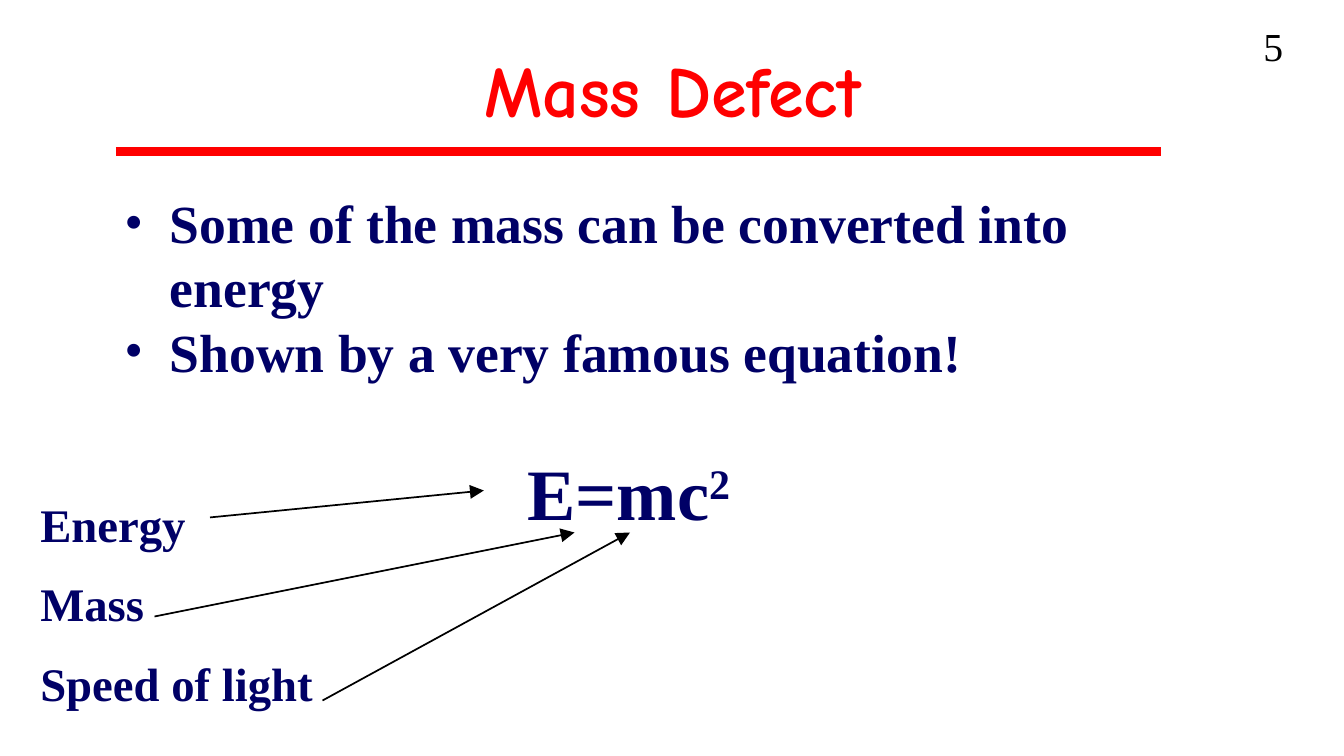
from typing import NamedTuple

import pptx
import pptx.dml.color
import pptx.enum.shapes
import pptx.enum.text
import pptx.oxml
import pptx.oxml.ns
import pptx.util

WIDTH, HEIGHT = 8, 4.5
RED = pptx.dml.color.RGBColor(0xFF, 0x00, 0x00)
NAVY = pptx.dml.color.RGBColor(0x00, 0x00, 0x66)
BLACK = pptx.dml.color.RGBColor(0x00, 0x00, 0x00)
SERIF, HAND = "Times New Roman", "Comic Neue"
HANGING = 0.27


class Box(NamedTuple):
    left: float
    top: float
    width: float
    height: float


class Link(NamedTuple):
    start: tuple[float, float]
    end: tuple[float, float]


POINTERS = [
    Link((1.25, 3.08), (2.88, 2.92)),  # energy
    Link((0.92, 3.67), (3.42, 3.17)),  # mass
    Link((1.92, 4.17), (3.75, 3.17)),  # speed of light
]


def place(shape, box: Box) -> None:
    shape.left, shape.top, shape.width, shape.height = map(pptx.util.Inches, box)


def add_child(parent, tag: str, **attributes: str) -> None:
    parent.append(parent.makeelement(pptx.oxml.ns.qn(tag), attributes))


def write(shape, lines: list[str], *, size: float, color=NAVY, font: str = SERIF,
          bold: bool = True, gap: float = 0, bullet: str = "", wrap: bool = True,
          align=pptx.enum.text.PP_ALIGN.LEFT,
          anchor=pptx.enum.text.MSO_ANCHOR.TOP, inset: float = 0.03) -> None:
    """Fill a shape with one paragraph per line; a caret starts a superscript."""
    frame = shape.text_frame
    frame.word_wrap = wrap
    frame.auto_size = pptx.enum.text.MSO_AUTO_SIZE.NONE
    frame.vertical_anchor = anchor
    frame.margin_left = frame.margin_right = pptx.util.Inches(0.07)
    frame.margin_top = frame.margin_bottom = pptx.util.Inches(inset)
    for index, line in enumerate(lines):
        paragraph = frame.add_paragraph() if index else frame.paragraphs[0]
        paragraph.alignment = align
        paragraph.space_before = pptx.util.Pt(gap if index else 0)
        if bullet:
            properties = paragraph._p.get_or_add_pPr()
            indent = pptx.util.Inches(HANGING)
            properties.set("marL", str(indent))
            properties.set("indent", str(-indent))
            add_child(properties, "a:buFont", typeface=font)
            add_child(properties, "a:buChar", char=bullet)
        for part, text in enumerate(line.split("^")):
            run = paragraph.add_run()
            run.text = text
            run.font.name, run.font.size = font, pptx.util.Pt(size)
            run.font.bold = bold
            run.font.color.rgb = color
            if part:
                run.font._element.set("baseline", "30000")


def add_text(slide, box: Box, lines: list[str], **text_format) -> None:
    write(slide.shapes.add_textbox(*map(pptx.util.Inches, box)), lines, **text_format)


def add_line(slide, link: Link, color, weight: float, arrow: bool = False) -> None:
    line = slide.shapes.add_connector(
        pptx.enum.shapes.MSO_CONNECTOR.STRAIGHT,
        *map(pptx.util.Inches, link.start + link.end))
    line.line.color.rgb = color
    line.line.width = pptx.util.Pt(weight)
    if arrow:
        add_child(line.line._get_or_add_ln(), "a:tailEnd", type="triangle")
    add_child(line._element.spPr, "a:effectLst")


def main() -> None:
    deck = pptx.Presentation()
    deck.slide_width = pptx.util.Inches(WIDTH)
    deck.slide_height = pptx.util.Inches(HEIGHT)
    slide = deck.slides.add_slide(deck.slide_layouts.get_by_name("Title Only"))

    title = slide.shapes.title
    place(title, Box(0.87, 0.25, 6.27, 0.55))
    write(title, ["Mass Defect"], size=31, color=RED, font=HAND,
          align=pptx.enum.text.PP_ALIGN.CENTER,
          anchor=pptx.enum.text.MSO_ANCHOR.MIDDLE)
    add_line(slide, Link((0.69, 0.9), (6.91, 0.9)), RED, 4)
    add_text(slide, Box(7.45, 0.09, 0.42, 0.36), ["5"], size=17, color=BLACK,
             bold=False, wrap=False, inset=0.04)

    add_text(slide, Box(0.67, 1.1, 6.73, 1.3),
             ["Some of the mass can be converted into energy",
              "Shown by a very famous equation!"], size=23, bullet="•")
    add_text(slide, Box(3.07, 2.64, 1.6, 0.6), ["E=mc^2"], size=31)

    for pointer in POINTERS:
        add_line(slide, pointer, BLACK, 0.75, arrow=True)
    add_text(slide, Box(0.17, 2.91, 2.47, 1.41),
             ["Energy", "Mass", "Speed of light"], size=20, gap=10, inset=0.04)

    deck.save("out.pptx")


if __name__ == "__main__":
    main()
